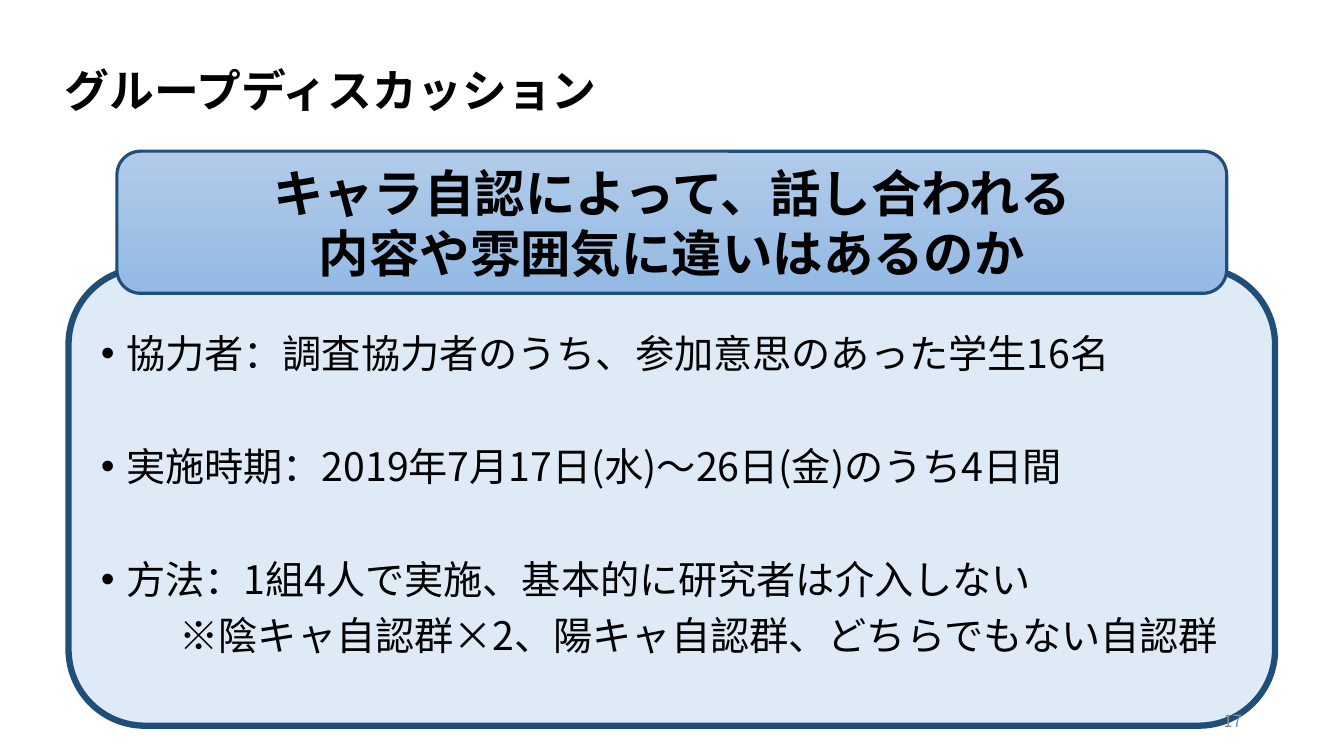
"""Build the group discussion slide."""
from lxml import etree
from pptx import Presentation
from pptx.dml.color import RGBColor
from pptx.enum.shapes import MSO_SHAPE
from pptx.enum.text import MSO_ANCHOR, MSO_AUTO_SIZE, PP_ALIGN
from pptx.oxml.ns import qn
from pptx.util import Inches, Pt

ROUND = MSO_SHAPE.ROUNDED_RECTANGLE
MIDDLE = MSO_ANCHOR.MIDDLE
FIXED = MSO_AUTO_SIZE.NONE
LEFT, CENTER, RIGHT = PP_ALIGN.LEFT, PP_ALIGN.CENTER, PP_ALIGN.RIGHT

THEME = {
    "head": "Arial", "font": "Noto Sans CJK JP",
    "ink": "000000", "gray": "8C8C8C", "edge": "1F4E79",
    "panel": "DEEBF7", "top": "B1CBE9", "base": "93B9E4",
    "title": 32, "theme": 36, "body": 28, "page": 12,
}

deck = Presentation()
deck.slide_width, deck.slide_height = Inches(13.33), Inches(7.5)
COL, ROW = deck.slide_width / 40, deck.slide_height / 30
slide = deck.slides.add_slide(deck.slide_layouts[1])


def grid(left, top, wide, high):
    return int(left * COL), int(top * ROW), int(wide * COL), int(high * ROW)


def write(shape, lines, size, align=LEFT, bold=False, ink="ink", font="font"):
    frame = shape.text_frame
    frame.word_wrap, frame.auto_size = True, FIXED
    frame.vertical_anchor = MIDDLE
    for i, line in enumerate(lines):
        para = frame.add_paragraph() if i else frame.paragraphs[0]
        para.alignment = align
        run = para.add_run()
        run.text = line
        run.font.size, run.font.bold = Pt(THEME[size]), bold
        run.font.name = THEME[font]
        run.font.color.rgb = RGBColor.from_string(THEME[ink])
        east = etree.SubElement(run.font._element, qn("a:ea"))
        east.set("typeface", THEME["font"])
    return frame.paragraphs


title = slide.shapes.title
title.left, title.top, title.width, title.height = grid(1.62, 1.2, 34.5, 5)
head = write(title, ["グループディスカッション"], "title", bold=True, font="head")
head[0].line_spacing = 0.9

panel = slide.placeholders[1]
panel.left, panel.top, panel.width, panel.height = grid(2.04, 10.64, 35.91, 18.16)
shape = etree.SubElement(panel._element.spPr, qn("a:prstGeom"), prst="roundRect")
etree.SubElement(shape, qn("a:avLst"))
panel.fill.solid()
panel.fill.fore_color.rgb = RGBColor.from_string(THEME["panel"])
panel.line.color.rgb = RGBColor.from_string(THEME["edge"])
panel.line.width = Pt(4.5)

ITEMS = [
    ("協力者：調査協力者のうち、参加意思のあった学生16名", 10, True),
    ("実施時期：2019年7月17日(水)～26日(金)のうち4日間", 50.4, True),
    ("方法：1組4人で実施、基本的に研究者は介入しない", 50.4, True),
    ("※陰キャ自認群×2、陽キャ自認群、どちらでもない自認群", 10, False),
]
paras = write(panel, [item[0] for item in ITEMS], "body")
for para, (_, gap, mark) in zip(paras, ITEMS):
    para.line_spacing, para.space_before = 0.9, Pt(gap)
    props = para._p.get_or_add_pPr()
    props.set("marL", str(Inches(0.25 if mark else 0.78)))
    props.set("indent", str(Inches(-0.25 if mark else 0)))
    if mark:
        etree.SubElement(props, qn("a:buFont"), typeface=THEME["head"])
        etree.SubElement(props, qn("a:buChar"), char="•")
    else:
        etree.SubElement(props, qn("a:buNone"))

banner = slide.shapes.add_shape(ROUND, *grid(3.48, 6, 33.03, 5.64))
banner.shadow.inherit = False
banner.fill.gradient()
banner.fill.gradient_angle = 270
for stop, tint in zip(banner.fill.gradient_stops, ("top", "base")):
    stop.color.rgb = RGBColor.from_string(THEME[tint])
banner.line.color.rgb = RGBColor.from_string(THEME["edge"])
banner.line.width = Pt(2.25)
write(banner, ["キャラ自認によって、話し合われる", "内容や雰囲気に違いはあるのか"],
      "theme", CENTER, True)

page = slide.shapes.add_textbox(*grid(28.26, 27.8, 9, 1.6))
write(page, ["17"], "page", RIGHT, ink="gray")

deck.save("out.pptx")
